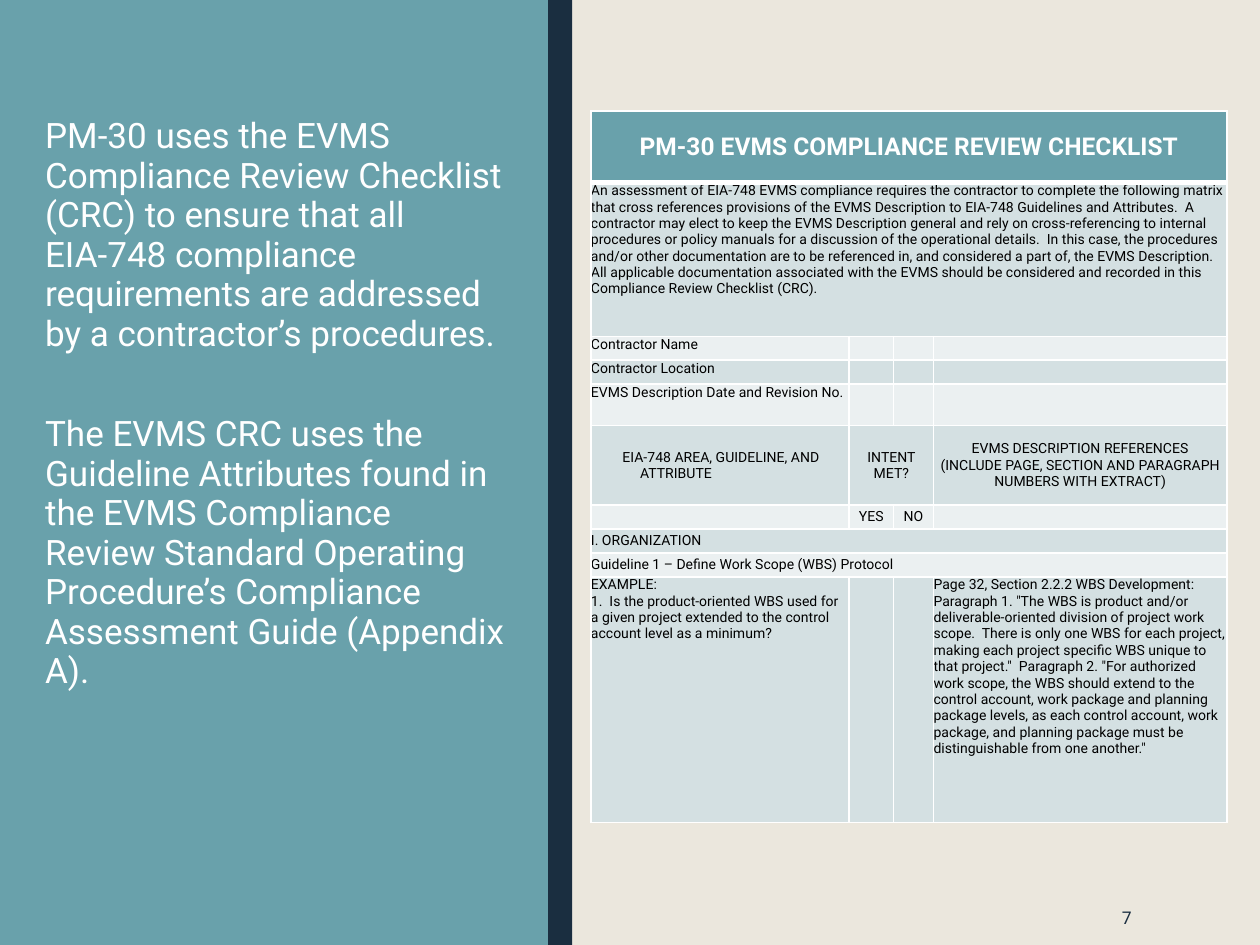
import pptx
import pptx.util
import pptx.dml.color
import pptx.enum.shapes
import pptx.enum.text
import pptx.oxml
import pptx.oxml.ns
from pptx.util import Inches, Pt

FONT = "Roboto"
COLORS = {"back": "EBE7DD", "teal": "69A1AB", "navy": "1A2E40", "white": "FFFFFF",
          "black": "000000", "dark": "D4E0E2", "light": "EBF0F1"}
ALIGN = pptx.enum.text.PP_ALIGN
ANCHOR = pptx.enum.text.MSO_ANCHOR


def rgb(name):
    return pptx.dml.color.RGBColor.from_string(COLORS[name])


def style(para, size, color, bold=False):
    """Format every run of a paragraph, or the end mark of an empty one."""
    for run in para.runs:
        run.font.name = FONT
        run.font.size = Pt(size)
        run.font.bold = bold
        run.font.color.rgb = rgb(color)
    if not para.runs:
        para._p.get_or_add_endParaRPr().set("sz", str(size * 100))


prs = pptx.Presentation()
prs.slide_width = Inches(10)
prs.slide_height = Inches(7.5)
slide = prs.slides.add_slide(prs.slide_layouts[6])
slide.background.fill.solid()
slide.background.fill.fore_color.rgb = rgb("back")

# Left panel and its edge
for left, width, color in [(0, 4.35, "teal"), (4.35, 0.19, "navy")]:
    panel = slide.shapes.add_shape(pptx.enum.shapes.MSO_SHAPE.RECTANGLE,
                                   Inches(left), 0, Inches(width), Inches(7.5))
    panel.shadow.inherit = False
    panel.fill.solid()
    panel.fill.fore_color.rgb = rgb(color)
    panel.line.fill.background()

intro = slide.shapes.add_textbox(Inches(0.26), Inches(0.88), Inches(3.86), Inches(5.95))
frame = intro.text_frame
frame.word_wrap = True
frame.text = (
    "PM-30 uses the EVMS Compliance Review Checklist (CRC) to ensure that all EIA-748 "
    "compliance requirements are addressed by a contractor’s procedures.\n"
    "The EVMS CRC uses the Guideline Attributes found in the EVMS Compliance Review "
    "Standard Operating Procedure’s Compliance Assessment Guide (Appendix A).")
for para, gap in zip(frame.paragraphs, [4, 33]):
    para.line_spacing = 0.94
    para.space_before = Pt(gap)
    para.space_after = Pt(2)
    style(para, 20, "white")

# Checklist
rows = [
    ["PM-30 EVMS COMPLIANCE REVIEW CHECKLIST", "", "", ""],
    ["An assessment of EIA-748 EVMS compliance requires the contractor to complete the "
     "following matrix that cross references provisions of the EVMS Description to EIA-748 "
     "Guidelines and Attributes.  A contractor may elect to keep the EVMS Description general "
     "and rely on cross-referencing to internal procedures or policy manuals for a discussion "
     "of the operational details.  In this case, the procedures and/or other documentation are "
     "to be referenced in, and considered a part of, the EVMS Description.  All applicable "
     "documentation associated with the EVMS should be considered and recorded in this "
     "Compliance Review Checklist (CRC).", "", "", ""],
    ["Contractor Name", "", "", ""],
    ["Contractor Location", "", "", ""],
    ["EVMS Description Date and Revision No.", "", "", ""],
    ["EIA-748 AREA, GUIDELINE, AND ATTRIBUTE", "INTENT MET?", "",
     "EVMS DESCRIPTION REFERENCES\n"
     "(INCLUDE PAGE, SECTION AND PARAGRAPH NUMBERS WITH EXTRACT)"],
    ["", "YES", "NO", ""],
    ["I. ORGANIZATION", "", "", ""],
    ["Guideline 1 – Define Work Scope (WBS) Protocol", "", "", ""],
    ["EXAMPLE:\n1.  Is the product-oriented WBS used for a given project extended to the "
     "control account level as a minimum?", "", "",
     "Page 32, Section 2.2.2 WBS Development: Paragraph 1. \"The WBS is product and/or "
     "deliverable-oriented division of project work scope.  There is only one WBS for each "
     "project, making each project specific WBS unique to that project.\"  Paragraph 2. \"For "
     "authorized work scope, the WBS should extend to the control account, work package and "
     "planning package levels, as each control account, work package, and planning package "
     "must be distinguishable from one another.\""],
]
widths = [2.05, 0.35, 0.32, 2.33]
heights = [0.57, 1.22, 0.19, 0.19, 0.33, 0.63, 0.19, 0.19, 0.19, 1.95]
table = slide.shapes.add_table(len(rows), len(widths), Inches(4.69), Inches(0.88),
                               Inches(sum(widths)), Inches(sum(heights))).table
for col, width in zip(table.columns, widths):
    col.width = Inches(width)
for row, height in zip(table.rows, heights):
    row.height = Inches(height)
for r in [0, 1, 7, 8]:
    table.cell(r, 0).merge(table.cell(r, 3))
table.cell(5, 1).merge(table.cell(5, 2))

for r, texts in enumerate(rows):
    for c, text in enumerate(texts):
        cell = table.cell(r, c)
        cell.margin_left = cell.margin_right = cell.margin_top = cell.margin_bottom = 0
        cell.vertical_anchor = ANCHOR.MIDDLE if r in (0, 5, 6, 7, 8) else ANCHOR.TOP
        para = cell.text_frame.paragraphs[0]
        para.text = text
        para.alignment = ALIGN.CENTER if r in (0, 5, 6) else ALIGN.LEFT
        if r == 0:
            style(para, 14, "white", True)
        else:
            style(para, 8, "black")
        props = cell._tc.get_or_add_tcPr()
        for side in "LRTB":
            thick = 3 if (r, side) in [(0, "B"), (1, "T")] else 1
            props.append(pptx.oxml.parse_xml(
                f'<a:ln{side} {pptx.oxml.ns.nsdecls("a")} w="{Pt(thick)}"><a:solidFill>'
                f'<a:srgbClr val="{COLORS["white"]}"/></a:solidFill></a:ln{side}>'))
        cell.fill.solid()
        cell.fill.fore_color.rgb = rgb("teal" if r == 0 else "dark" if r % 2 else "light")

# Hanging indent of the first column heading
para = table.cell(5, 0).text_frame.paragraphs[0]
para.alignment = ALIGN.LEFT
para._p.get_or_add_pPr().set("marL", str(Inches(0.39)))
para._p.get_or_add_pPr().set("indent", str(Inches(-0.14)))

number = slide.shapes.add_textbox(Inches(7.77), Inches(7.06), Inches(1.31), Inches(0.44))
number.text_frame.word_wrap = True
number.text_frame.vertical_anchor = ANCHOR.MIDDLE
para = number.text_frame.paragraphs[0]
para.text = "7"
para.alignment = ALIGN.RIGHT
style(para, 10, "navy")

prs.save("out.pptx")
